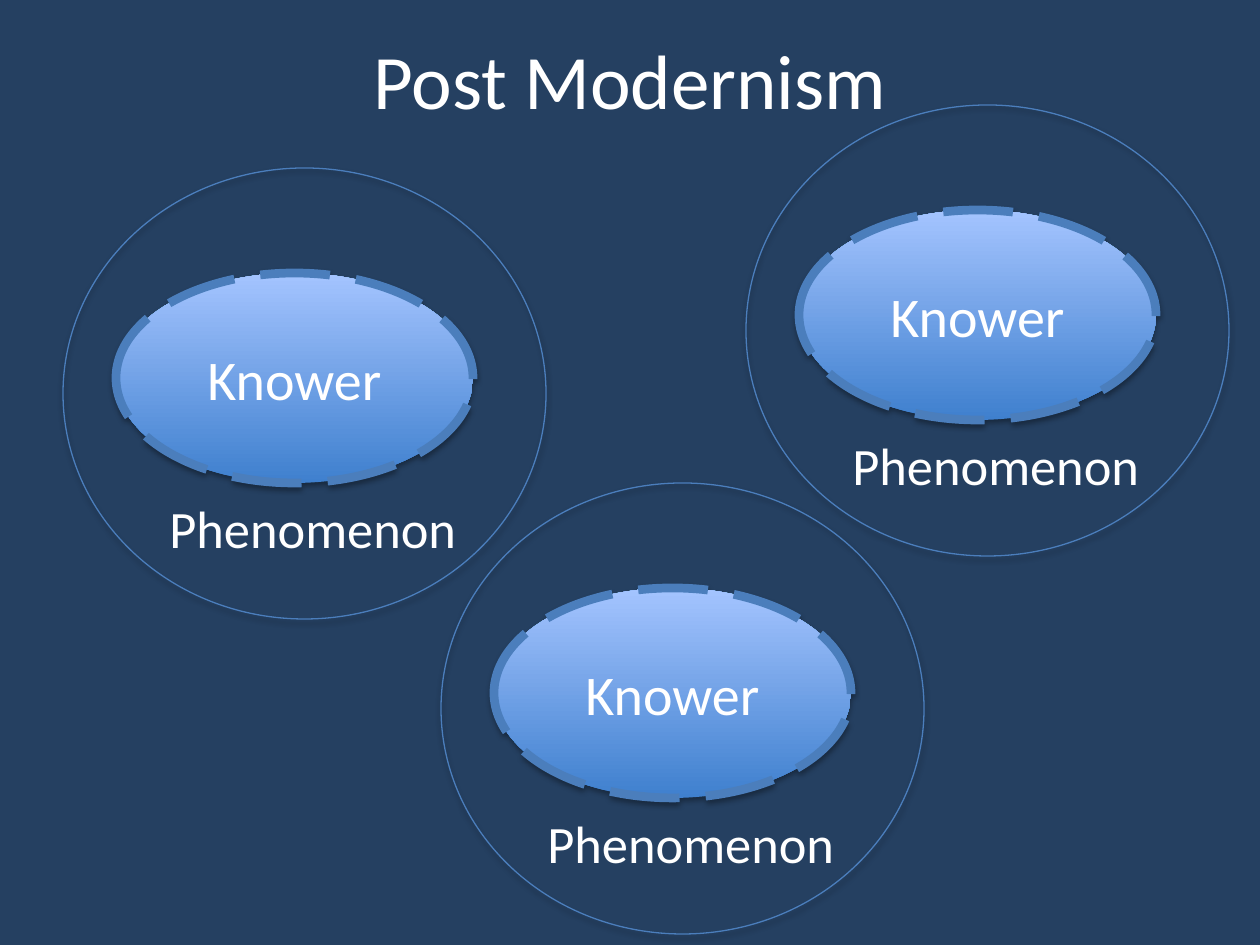
from lxml import etree
from pptx import Presentation
from pptx import util as u
from pptx.dml.color import RGBColor
from pptx.enum import dml, shapes, text
from pptx.oxml.ns import qn

SCALE = 914400 / 126  # EMU per px


def px(*lengths):
    return [u.Emu(round(length * SCALE)) for length in lengths]


def color(value):
    return RGBColor.from_string(value)


class SlideBuilder:
    FONT = "Calibri"
    BACKGROUND, WHITE, LINE = "254061", "FFFFFF", "4B7EBC"
    GRADIENT = ("3F80CE", "A4C4FF")

    def __init__(self, deck):
        self.page = deck.slides.add_slide(deck.slide_layouts[5])
        background = self.page.background.fill
        background.solid()
        background.fore_color.rgb = color(self.BACKGROUND)

    def add_words(self, frame, words, size, **paragraph_format):
        para = frame.paragraphs[0]
        for name, value in paragraph_format.items():
            setattr(para, name, value)
        span = para.add_run()
        span.text = words
        for name, value in {"name": self.FONT, "size": u.Pt(size)}.items():
            setattr(span.font, name, value)
        span.font.color.rgb = color(self.WHITE)

    def title(self, words, left, top, width, height):
        title = self.page.shapes.title
        places = zip(("left", "top", "width", "height"), px(left, top, width, height))
        for name, value in places:
            setattr(title, name, value)
        title.text_frame.vertical_anchor = text.MSO_ANCHOR.MIDDLE
        self.add_words(title.text_frame, words, 44, alignment=text.PP_ALIGN.CENTER)

    def shadow(self, shape):
        shape.shadow.inherit = False
        effects = shape._element.spPr.find(qn("a:effectLst"))
        outer = etree.SubElement(effects, qn("a:outerShdw"), blurRad="40000",
                                 dist="23000", dir="5400000", rotWithShape="0")
        black = etree.SubElement(outer, qn("a:srgbClr"), val="000000")
        etree.SubElement(black, qn("a:alpha"), val="35000")

    def ellipse(self, group, left, top, width, height, line_width):
        oval = group.shapes.add_shape(shapes.MSO_SHAPE.OVAL, *px(left, top, width, height))
        oval.fill.background()
        oval.line.color.rgb = color(self.LINE)
        oval.line.width = u.Pt(line_width)
        self.shadow(oval)
        return oval

    def knower(self, group, left, top, width, height):
        oval = self.ellipse(group, left, top, width, height, 5)
        oval.line.dash_style = dml.MSO_LINE.LONG_DASH
        oval.fill.gradient()
        oval.fill.gradient_angle = 90
        for stop, value in zip(oval.fill.gradient_stops, self.GRADIENT):
            stop.color.rgb = color(value)
        oval.text_frame.vertical_anchor = text.MSO_ANCHOR.MIDDLE
        self.add_words(oval.text_frame, "Knower", 32, alignment=text.PP_ALIGN.CENTER)

    def label(self, group, words, left, top, width, height):
        box = group.shapes.add_textbox(*px(left, top, width, height))
        frame_format = {"word_wrap": False,
                        "auto_size": text.MSO_AUTO_SIZE.SHAPE_TO_FIT_TEXT}
        for name, value in frame_format.items():
            setattr(box.text_frame, name, value)
        self.add_words(box.text_frame, words, 30)

    def world(self, left, top):
        """A knower and a phenomenon inside one circle."""
        group = self.page.shapes.add_group_shape()
        self.knower(group, left + 53, top + 105, 357, 210)
        self.ellipse(group, left, top, 483, 451, 0.75)
        self.label(group, "Phenomenon", left + 94, top + 322, 315, 77)


def main():
    deck = Presentation()
    deck.slide_width, deck.slide_height = px(1260, 945)
    slide = SlideBuilder(deck)

    # Heading
    slide.title("Post Modernism", 63, 0, 1134, 158)

    # Three separate worlds
    for left, top in ((63, 168), (746, 105), (441, 483)):
        slide.world(left, top)

    deck.save("out.pptx")


if __name__ == "__main__":
    main()
